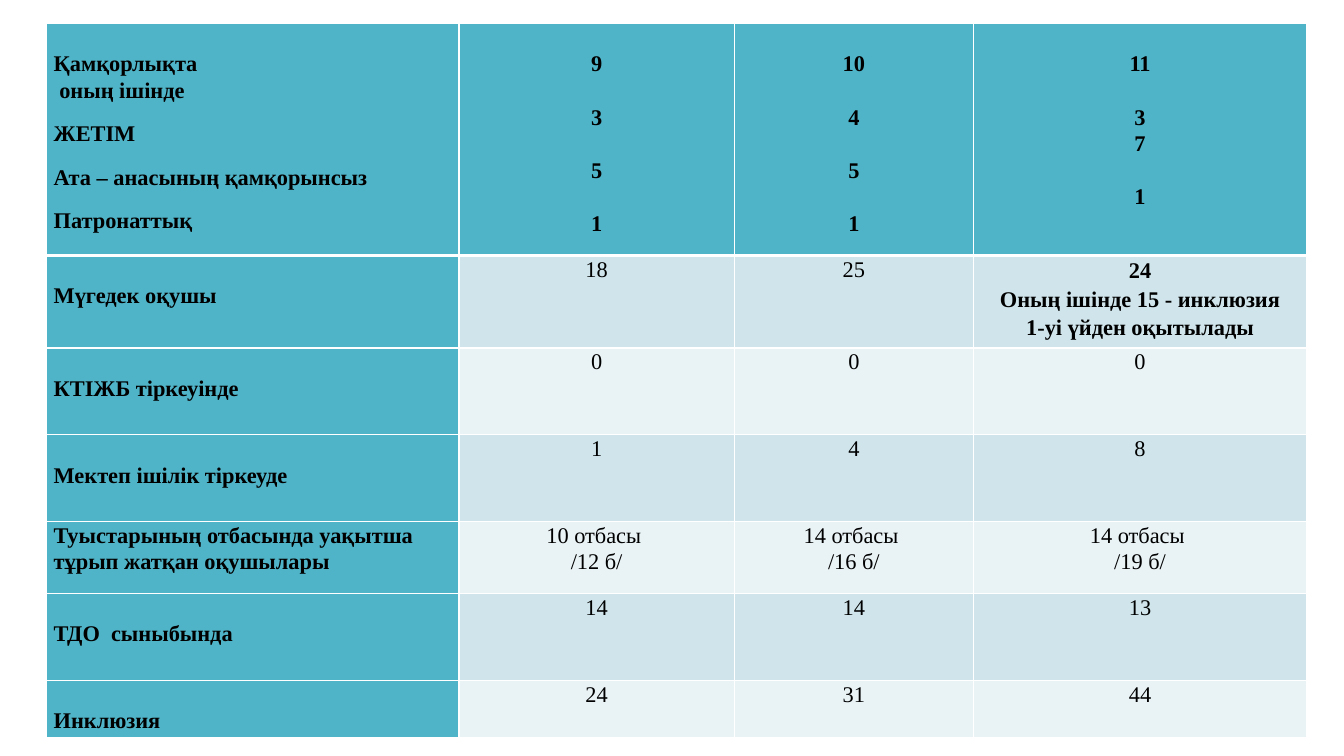
import pptx
import pptx.dml.color
import pptx.enum.text
import pptx.oxml
import pptx.oxml.ns
import pptx.util
from pptx.util import Pt

COLORS = {
    "header": "50B4C8",
    "band_dark": "D0E5EB",
    "band_light": "E9F2F5",
    "border": "FFFFFF",
    "text": "000000",
}
LINE_GAP = 19
SMALL_GAP = 12

COLUMN_WIDTHS = [294.5, 196.6, 170.9, 238]
ROW_HEIGHTS = [165.6, 66.2, 62, 62, 51.4, 62, 41]

# Header cells: each line with the space above it
HEADER = [
    [(LINE_GAP, "Қамқорлықта"), (0, " оның ішінде"), (SMALL_GAP, "ЖЕТІМ"),
     (SMALL_GAP, "Ата – анасының қамқорынсыз"), (SMALL_GAP, "Патронаттық")],
    [(LINE_GAP, "9"), (LINE_GAP, "3"), (LINE_GAP, "5"), (LINE_GAP, "1")],
    [(LINE_GAP, "10"), (LINE_GAP, "4"), (LINE_GAP, "5"), (LINE_GAP, "1")],
    [(LINE_GAP, "11"), (LINE_GAP, "3"), (0, "7"), (LINE_GAP, "1")],
]

# Body rows: space above the label, label, values
BODY = [
    (LINE_GAP, "Мүгедек оқушы",
     ["18", "25", "24\nОның ішінде 15 - инклюзия\n1-уі үйден оқытылады"]),
    (LINE_GAP, "КТІЖБ тіркеуінде", ["0", "0", "0"]),
    (LINE_GAP, "Мектеп ішілік тіркеуде", ["1", "4", "8"]),
    (0, "Туыстарының отбасында уақытша тұрып жатқан оқушылары",
     ["10 отбасы \n/12 б/", "14 отбасы \n/16 б/", "14 отбасы \n/19 б/"]),
    (LINE_GAP, "ТДО  сыныбында", ["14", "14", "13"]),
    (LINE_GAP, "Инклюзия", ["24", "31", "44"]),
]


class SlideBuilder:
    font_name = "Times New Roman"
    font_size = 16

    def __init__(self, presentation):
        self.slide = presentation.slides.add_slide(presentation.slide_layouts[6])

    def table(self, left, top, column_widths, row_heights):
        shape = self.slide.shapes.add_table(
            len(row_heights), len(column_widths), Pt(left), Pt(top),
            Pt(sum(column_widths)), Pt(sum(row_heights)))
        table = shape.table
        table.first_row = False
        table.horz_banding = False
        for column, width in zip(table.columns, column_widths):
            column.width = Pt(width)
        for row, height in zip(table.rows, row_heights):
            row.height = Pt(height)
        return table

    def cell(self, cell, lines, fill, bold, centered, spacing=1.07):
        cell.margin_left = cell.margin_right = Pt(5)
        cell.margin_top = Pt(lines[0][0])
        cell.margin_bottom = 0
        cell.fill.solid()
        cell.fill.fore_color.rgb = pptx.dml.color.RGBColor.from_string(COLORS[fill])
        alignment = pptx.enum.text.PP_ALIGN
        text_frame = cell.text_frame
        text_frame.text = "\n".join(text for _, text in lines)
        for index, paragraph in enumerate(text_frame.paragraphs):
            paragraph.alignment = alignment.CENTER if centered else alignment.LEFT
            paragraph.line_spacing = spacing
            if index:
                paragraph.space_before = Pt(lines[index][0])
            for run in paragraph.runs:
                run.font.name = self.font_name
                run.font.size = Pt(self.font_size)
                run.font.bold = bold
                run.font.color.rgb = pptx.dml.color.RGBColor.from_string(COLORS["text"])

    def borders(self, cell, top=1, bottom=1):
        properties = cell._tc.get_or_add_tcPr()
        widths = {"lnL": 1, "lnR": 1, "lnT": top, "lnB": bottom}
        for position, (side, width) in enumerate(widths.items()):
            line = pptx.oxml.parse_xml(
                f'<a:{side} {pptx.oxml.ns.nsdecls("a")} w="{Pt(width)}"><a:solidFill>'
                f'<a:srgbClr val="{COLORS["border"]}"/></a:solidFill></a:{side}>')
            properties.insert(position, line)


def main():
    presentation = pptx.Presentation()
    presentation.slide_width = Pt(960)
    presentation.slide_height = Pt(540)
    builder = SlideBuilder(presentation)
    table = builder.table(33.4, 16.8, COLUMN_WIDTHS, ROW_HEIGHTS)

    # Header row
    for column, lines in enumerate(HEADER):
        cell = table.cell(0, column)
        builder.cell(cell, lines, "header", bold=True, centered=column > 0)
        builder.borders(cell, bottom=3)

    # Body rows with alternating bands
    for row, (gap, label, values) in enumerate(BODY, start=1):
        band = "band_dark" if row % 2 else "band_light"
        builder.cell(table.cell(row, 0), [(gap, label)], "header",
                     bold=True, centered=False)
        for column, value in enumerate(values, start=1):
            lines = [(0, text) for text in value.split("\n")]
            detailed = len(lines) == 3
            builder.cell(table.cell(row, column), lines, band, bold=detailed,
                         centered=True, spacing=1.14 if detailed else 1.07)
        for column in range(len(COLUMN_WIDTHS)):
            builder.borders(table.cell(row, column), top=3 if row == 1 else 1)

    presentation.save("out.pptx")


if __name__ == "__main__":
    main()
